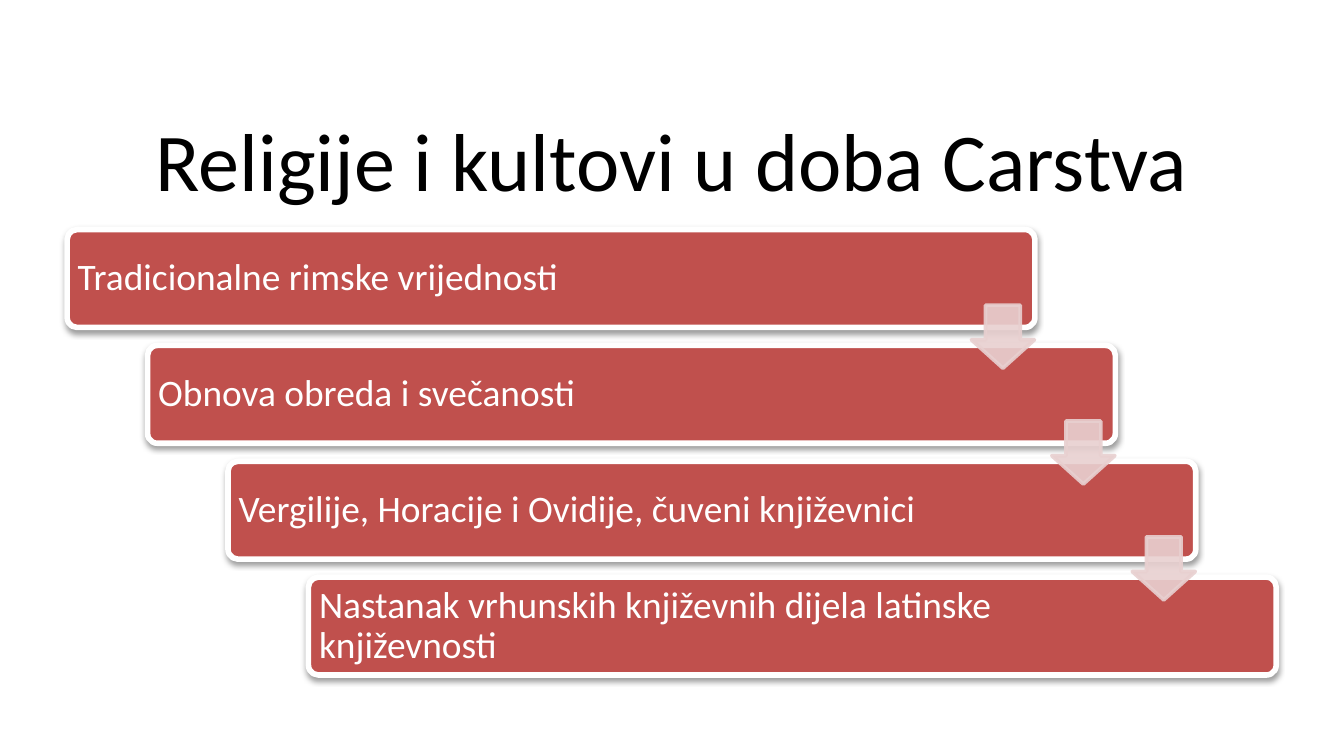
from dataclasses import dataclass

from lxml import etree
from pptx import Presentation
from pptx.dml.color import RGBColor
from pptx.enum.shapes import MSO_SHAPE
from pptx.enum.text import MSO_ANCHOR, PP_ALIGN
from pptx.oxml import parse_xml
from pptx.oxml.ns import qn
from pptx.util import Cm, Pt

ROUNDED, DOWN_ARROW = MSO_SHAPE.ROUNDED_RECTANGLE, MSO_SHAPE.DOWN_ARROW
MIDDLE = MSO_ANCHOR.MIDDLE
LEFT, CENTER = PP_ALIGN.LEFT, PP_ALIGN.CENTER

TITLE = "Religije i kultovi u doba Carstva"
STEPS = [
    "Tradicionalne rimske vrijednosti",
    "Obnova obreda i svečanosti",
    "Vergilije, Horacije i Ovidije, čuveni književnici",
    "Nastanak vrhunskih književnih dijela latinske književnosti",
]

STEP_LEFT, STEP_TOP, STEP_W, STEP_H = 1.27, 4.34, 18.29, 1.85
SHIFT_X, SHIFT_Y = 1.52, 2.19
FIRST_TEXT_W, TEXT_W = 16.23, 15.55
ARROW_LEFT, ARROW_TOP, ARROW_SIZE = 18.36, 5.77, 1.19


@dataclass(frozen=True)
class Theme:
    font: str = "Calibri"
    title_size: int = 44
    step_size: int = 20
    title: str = "000000"
    step: str = "C0504D"
    light: str = "FFFFFF"
    arrow: str = "E8D0D0"
    arrow_alpha: int = 90


THEME = Theme()
SHADOW = (
    '<a:effectLst xmlns:a="http://schemas.openxmlformats.org/drawingml/2006/main">'
    '<a:outerShdw blurRad="40000" dist="20000" dir="5400000" rotWithShape="0">'
    '<a:srgbClr val="000000"><a:alpha val="38000"/></a:srgbClr>'
    "</a:outerShdw></a:effectLst>"
)


def add_text(shapes, text, box, size, color, align, inset):
    sp = shapes.add_textbox(*map(Cm, box))
    tf = sp.text_frame
    tf.word_wrap = True
    tf.vertical_anchor = MIDDLE
    tf.margin_left = tf.margin_right = Cm(inset)
    tf.margin_top = tf.margin_bottom = Cm(inset)
    p = tf.paragraphs[0]
    p.text = text
    p.alignment = align
    p.line_spacing = 0.9
    p.font.name = THEME.font
    p.font.size = Pt(size)
    p.font.color.rgb = RGBColor.from_string(color)


def add_shape(shapes, kind, box, adjustments, fill, line, line_width):
    sp = shapes.add_shape(kind, *map(Cm, box))
    sp.shadow.inherit = False
    for i, value in enumerate(adjustments):
        sp.adjustments[i] = value
    sp.fill.solid()
    sp.fill.fore_color.rgb = RGBColor.from_string(fill)
    sp.line.color.rgb = RGBColor.from_string(line)
    sp.line.width = Pt(line_width)
    return sp


def add_step(shapes, i, text):
    left, top = STEP_LEFT + i * SHIFT_X, STEP_TOP + i * SHIFT_Y
    sp = add_shape(shapes, ROUNDED, (left, top, STEP_W, STEP_H), [0.1],
                   THEME.step, THEME.light, 3)
    effects = sp._element.spPr.find(qn("a:effectLst"))
    effects.getparent().replace(effects, parse_xml(SHADOW))
    width = TEXT_W if i else FIRST_TEXT_W
    add_text(shapes, text, (left, top, width, STEP_H),
             THEME.step_size, THEME.light, LEFT, 0.2)


def add_arrow(shapes, i):
    box = (ARROW_LEFT + i * SHIFT_X, ARROW_TOP + i * SHIFT_Y, ARROW_SIZE, ARROW_SIZE)
    sp = add_shape(shapes, DOWN_ARROW, box, [0.55, 0.45], THEME.arrow, THEME.arrow, 2)
    for color in sp._element.spPr.iter(qn("a:srgbClr")):
        etree.SubElement(color, qn("a:alpha")).set("val", str(THEME.arrow_alpha * 1000))


def main():
    """Build the slide of four descending steps joined by arrows."""
    prs = Presentation()
    prs.slide_width, prs.slide_height = Cm(25.4), Cm(14.29)
    s = prs.slides.add_slide(prs.slide_layouts[6])
    add_text(s.shapes, TITLE, (1.27, 2.13, 22.86, 1.98),
             THEME.title_size, THEME.title, CENTER, 0.13)
    shapes = s.shapes.add_group_shape().shapes
    for i, text in enumerate(STEPS):
        add_step(shapes, i, text)
    for i in range(len(STEPS) - 1):
        add_arrow(shapes, i)
    prs.save("out.pptx")


if __name__ == "__main__":
    main()
